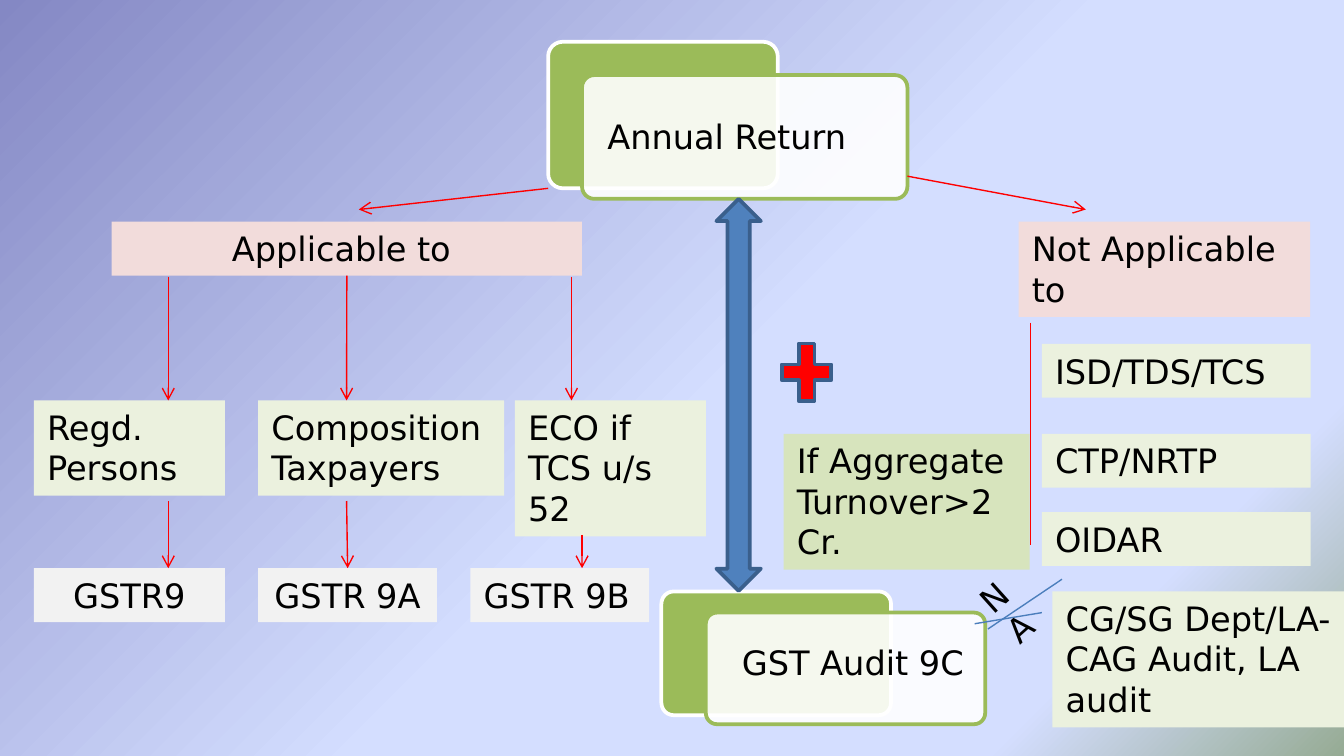
from lxml import etree
from pptx import Presentation
from pptx import util as u
from pptx.dml.color import RGBColor
from pptx.enum import shapes, text
from pptx.oxml import ns

BLACK = RGBColor(0x00, 0x00, 0x00)
WHITE = RGBColor(0xFF, 0xFF, 0xFF)
RED = RGBColor(0xFF, 0x00, 0x00)
GREEN = RGBColor(0x9B, 0xBB, 0x59)
LIGHT_GREEN = RGBColor(0xD7, 0xE4, 0xBD)
PALE_GREEN = RGBColor(0xEB, 0xF1, 0xDE)
PINK = RGBColor(0xF2, 0xDC, 0xDB)
GREY = RGBColor(0xF2, 0xF2, 0xF2)
BLUE = RGBColor(0x4F, 0x81, 0xBD)
DARK_BLUE = RGBColor(0x3A, 0x5F, 0x8C)
LINE_BLUE = RGBColor(0x4B, 0x7E, 0xBC)
BACKDROP = [
    (0, RGBColor(0x84, 0x88, 0xC4)),
    (53, RGBColor(0xD4, 0xDE, 0xFF)),
    (83, RGBColor(0xD4, 0xDE, 0xFF)),
    (100, RGBColor(0x96, 0xAB, 0x94)),
]

KIND = shapes.MSO_SHAPE
LEFT, CENTER = text.PP_ALIGN.LEFT, text.PP_ALIGN.CENTER
TOP_SITE, BOTTOM_SITE = 0, 2


def add_xml(parent, tag, **attributes):
    return etree.SubElement(parent, ns.qn(tag), attributes)


class Diagram:
    font = {"name": "DejaVu Sans", "size": u.Pt(18)}
    frame = {
        "word_wrap": True,
        "auto_size": text.MSO_AUTO_SIZE.SHAPE_TO_FIT_TEXT,
        "vertical_anchor": text.MSO_ANCHOR.TOP,
    }

    def __init__(self, s):
        self.s = s

    def backdrop(self, stops):
        fill = self.s.background.fill
        fill.gradient()
        fill.gradient_angle = 315
        stop_list = next(self.s.element.iter(ns.qn("a:gsLst")))
        for old in list(stop_list):
            stop_list.remove(old)
        for percent, color in stops:
            stop = add_xml(stop_list, "a:gs", pos=str(percent * 1000))
            add_xml(stop, "a:srgbClr", val=str(color))

    def put_text(self, sp, words, align=LEFT):
        tf = sp.text_frame
        for key, value in self.frame.items():
            setattr(tf, key, value)
        p = tf.paragraphs[0]
        p.alignment = align
        r = p.add_run()
        r.text = words
        for key, value in self.font.items():
            setattr(r.font, key, value)
        r.font.color.rgb = BLACK

    def shape(self, kind, at, fill, line=None):
        sp = self.s.shapes.add_shape(kind, *map(u.Cm, at))
        sp.shadow.inherit = False
        sp.fill.solid()
        sp.fill.fore_color.rgb = fill
        if line is None:
            sp.line.fill.background()
        else:
            sp.line.color.rgb = line
            sp.line.width = u.Pt(2)
        return sp

    def box(self, words, at, fill, align=LEFT):
        sp = self.shape(KIND.RECTANGLE, at, fill)
        self.put_text(sp, words, align)
        return sp

    def label(self, words, at, rotation=0):
        sp = self.s.shapes.add_textbox(*map(u.Cm, at))
        sp.rotation = rotation
        self.put_text(sp, words)

    def card(self, words, back, front, label):
        """Add a white card, slightly see-through, over a green one."""
        below = self.shape(KIND.ROUNDED_RECTANGLE, back, GREEN, WHITE)
        above = self.shape(KIND.ROUNDED_RECTANGLE, front, WHITE, GREEN)
        for sp in (below, above):
            sp.adjustments[0] = 0.1
        color = above.element.spPr.find(ns.qn("a:solidFill"))[0]
        add_xml(color, "a:alpha", val="90000")
        self.label(words, label)

    def line(self, start, end, color=RED, arrow=True, source=None, target=None):
        cx = self.s.shapes.add_connector(
            shapes.MSO_CONNECTOR.STRAIGHT, *map(u.Cm, start + end))
        if source is not None:
            cx.begin_connect(source, BOTTOM_SITE)
        if target is not None:
            cx.end_connect(target, TOP_SITE)
        cx.line.color.rgb = color
        cx.line.width = u.Pt(0.75)
        if arrow:
            add_xml(cx.element.spPr.find(ns.qn("a:ln")), "a:tailEnd", type="arrow")
        add_xml(cx.element.spPr, "a:effectLst")


def main():
    prs = Presentation()
    prs.slide_width, prs.slide_height = u.Cm(25.4), u.Cm(14.29)
    d = Diagram(prs.slides.add_slide(prs.slide_layouts[6]))
    d.backdrop(BACKDROP)

    d.card("Annual Return", (10.36, 0.79, 4.34, 2.77),
           (11, 1.42, 6.15, 2.34), (11.23, 2.06, 5.51, 1.02))
    d.card("GST Audit 9C", (12.5, 11.18, 4.34, 2.34),
           (13.34, 11.58, 5.28, 2.11), (13.77, 12.01, 4.88, 1.02))

    heading_top, payer_top, form_top, row = 4.19, 7.57, 10.74, 1.02
    applicable = d.box("Applicable to ", (2.11, heading_top, 8.89, row), PINK, CENTER)
    d.box("Not Applicable to", (19.25, heading_top, 5.51, 1.8), PINK)

    for words, left, width, height in [
        ("Regd. Persons", 0.64, 3.61, 1.8),
        ("Composition Taxpayers", 4.88, 4.65, 1.8),
        ("ECO if TCS u/s 52", 9.73, 3.61, 2.57),
    ]:
        d.box(words, (left, payer_top, width, height), PALE_GREEN)

    forms = [
        d.box(words, (left, form_top, width, row), GREY, align)
        for words, left, width, align in [
            ("GSTR9", 0.64, 3.61, CENTER),
            ("GSTR 9A", 4.88, 3.38, CENTER),
            ("GSTR 9B", 8.89, 3.38, LEFT),
        ]
    ]

    d.shape(KIND.UP_DOWN_ARROW, (13.54, 3.76, 0.84, 7.41), BLUE, DARK_BLUE)
    d.shape(KIND.MATH_PLUS, (14.61, 6.3, 1.27, 1.48), RED, DARK_BLUE)
    d.box("If Aggregate Turnover>2 Cr.", (14.81, 8.2, 4.65, 2.57), LIGHT_GREEN)

    for words, top in [("ISD/TDS/TCS", 6.5), ("CTP/NRTP", 8.2), ("OIDAR", 9.68)]:
        d.box(words, (19.69, top, 5.08, row), PALE_GREEN)
    d.box("CG/SG Dept/LA- CAG Audit, LA audit", (19.89, 11.18, 5.51, 2.57), PALE_GREEN)

    for x, source in [(3.18, None), (6.55, applicable), (10.8, None)]:
        d.line((x, 5.23), (x, payer_top), source=source)
    for x, top, target in [(3.18, 9.47, None), (6.55, 9.47, forms[1]), (11, 10.11, None)]:
        d.line((x, top), (x, form_top), target=target)
    d.line((10.36, 3.56), (6.78, 3.96))
    d.line((17.15, 3.33), (20.52, 3.96))
    d.line((19.48, 6.1), (19.48, 10.31), arrow=False)

    d.line((18.42, 11.79), (19.69, 11.58), LINE_BLUE, arrow=False)
    d.label("NA", (18.54, 10.64, 1.07, 1.8), rotation=318.2)
    d.line((20.07, 10.95), (18.67, 11.89), LINE_BLUE, arrow=False)

    prs.save("out.pptx")


if __name__ == "__main__":
    main()
